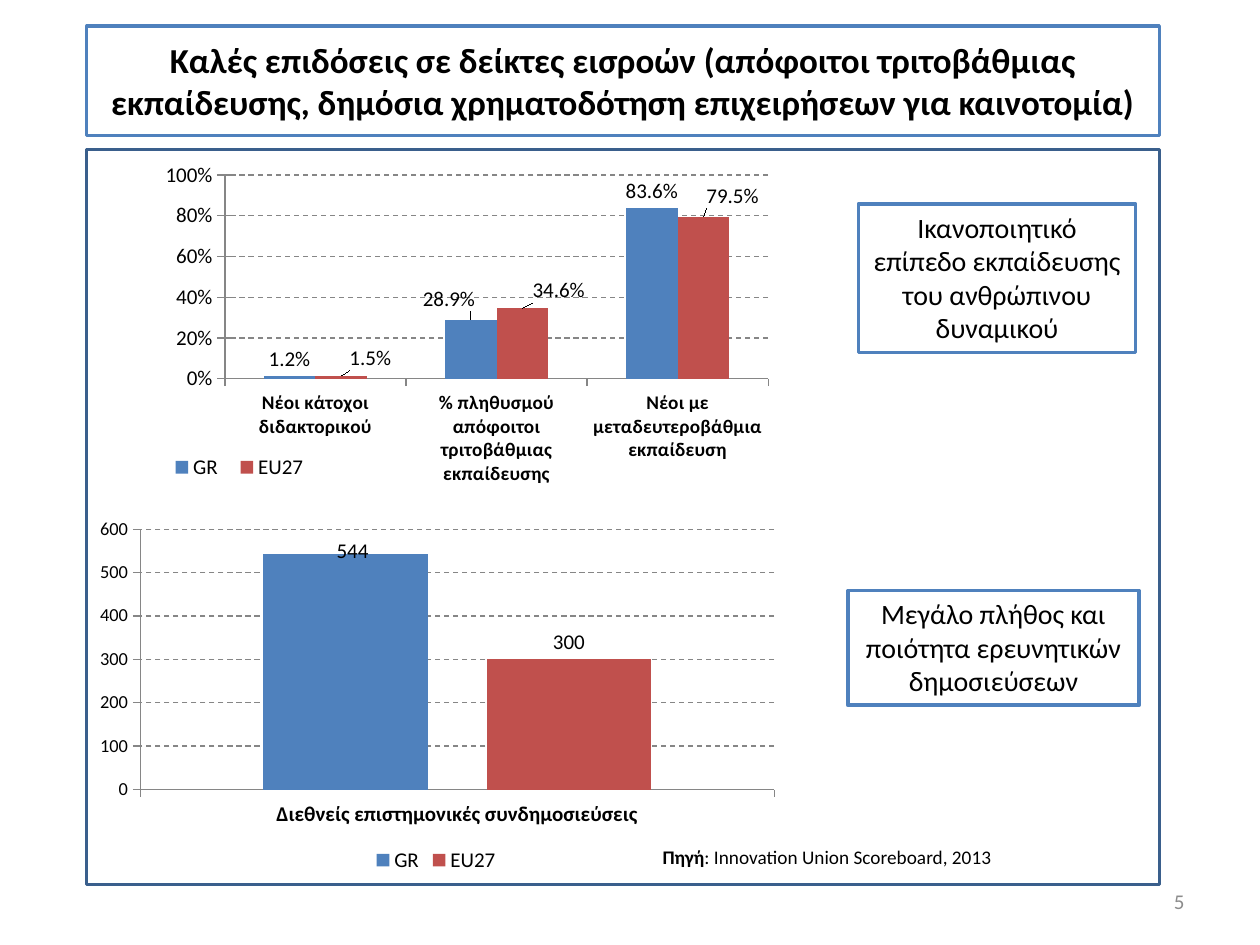
"""Build a slide with two Greek and EU27 column charts and short findings."""
from lxml import etree
from pptx import Presentation
from pptx.chart.data import CategoryChartData
from pptx.dml.color import RGBColor
from pptx.enum.chart import XL_CHART_TYPE, XL_LABEL_POSITION, XL_LEGEND_POSITION, XL_TICK_MARK
from pptx.enum.dml import MSO_LINE
from pptx.enum.shapes import MSO_SHAPE
from pptx.enum.text import MSO_ANCHOR, PP_ALIGN
from pptx.oxml.ns import qn
from pptx.util import Pt

COLUMN = XL_CHART_TYPE.COLUMN_CLUSTERED
OUTER = XL_LABEL_POSITION.OUTSIDE_END
BOTTOM = XL_LEGEND_POSITION.BOTTOM
OUT, CROSS = XL_TICK_MARK.OUTSIDE, XL_TICK_MARK.CROSS
DASH = MSO_LINE.DASH
RECT = MSO_SHAPE.RECTANGLE
TOP, MIDDLE = MSO_ANCHOR.TOP, MSO_ANCHOR.MIDDLE
LEFT, CENTER, RIGHT = PP_ALIGN.LEFT, PP_ALIGN.CENTER, PP_ALIGN.RIGHT
BLACK = RGBColor(0, 0, 0)
WHITE = RGBColor(255, 255, 255)
BLUE = RGBColor(0x4F, 0x81, 0xBD)
RED = RGBColor(0xC0, 0x50, 0x4D)
NAVY = RGBColor(0x3A, 0x5F, 0x8C)
GREY = RGBColor(0x8C, 0x8C, 0x8C)
RULE = RGBColor(0x86, 0x86, 0x86)
FONT = "Calibri"

prs = Presentation()
prs.slide_width, prs.slide_height = Pt(720), Pt(540)
slide = prs.slides.add_slide(prs.slide_layouts[6])
shapes = slide.shapes


def place(node, spot, after=None, inner=False):
    """Give a chart part a manual layout."""
    for old in node.findall(qn("c:layout")):
        node.remove(old)
    layout = etree.Element(qn("c:layout"))
    manual = etree.SubElement(layout, qn("c:manualLayout"))
    pairs = list(zip("xywh", spot))
    if inner:
        pairs.insert(0, ("layoutTarget", "inner"))
    if len(spot) == 4:
        at = 1 if inner else 0
        pairs[at:at] = [("xMode", "edge"), ("yMode", "edge")]
    for tag, val in pairs:
        etree.SubElement(manual, qn("c:" + tag)).set("val", str(val))
    if after is None:
        node.insert(0, layout)
    else:
        after.addnext(layout)
    return layout


def write(shape, runs, size, color, align, anchor):
    """Fill a shape with one paragraph of (text, bold) runs."""
    frame = shape.text_frame
    frame.word_wrap = True
    frame.vertical_anchor = anchor
    para = frame.paragraphs[0]
    para.alignment = align
    for text, bold in runs:
        run = para.add_run()
        run.text = text
        run.font.name, run.font.size, run.font.bold = FONT, Pt(size), bold
        run.font.color.rgb = color


papers = dict(
    box=(48, 292, 402.5, 209.5), cats=["Διεθνείς επιστημονικές συνδημοσιεύσεις"],
    vals=[[544], [300]], form="0", axis="0", top=600, step=100, tick=OUT,
    sizes=(12, 10.5), lap=-36, plot=(0.08, 0.05, 0.9, 0.71), key=None,
    shifts=[{0: (0.01, 0.04)}, {}])
skills = dict(
    box=(54, 88.5, 414, 191),
    cats=["Νέοι κάτοχοι διδακτορικού", "% πληθυσμού απόφοιτοι τριτοβάθμιας εκπαίδευσης",
          "Νέοι με μεταδευτεροβάθμια εκπαίδευση"],
    vals=[[0.012, 0.289, 0.836], [0.015, 0.346, 0.795]],
    form="0.0%", axis="0%", top=1, step=0.2, tick=CROSS,
    sizes=(11, 12), lap=0, plot=(0.18, 0.06, 0.75, 0.61), key=(0.09, 0.89, 0.22, 0.09),
    shifts=[{1: (-0.03, -0.01)}, {0: (0.04, 0), 1: (0.05, 0), 2: (0.04, -0.01)}])

for info in (papers, skills):
    data = CategoryChartData(number_format=info["form"])
    data.categories = info["cats"]
    for name, vals in zip(("GR", "EU27"), info["vals"]):
        data.add_series(name, vals)
    chart = shapes.add_chart(COLUMN, *map(Pt, info["box"]), data).chart
    chart.has_title = False
    chart.font.name, chart.font.size = FONT, Pt(12)
    chart.font.color.rgb = BLACK
    chart.has_legend = True
    legend = chart.legend
    legend.position, legend.include_in_layout = BOTTOM, False
    legend.font.size = Pt(12)
    if info["key"]:
        element = legend._element
        place(element, info["key"], element.find(qn("c:legendPos")))
    area = chart._chartSpace.chart.plotArea
    place(area, info["plot"], inner=True)

    cat, val = chart.category_axis, chart.value_axis
    for axis, tick, size in zip((cat, val), (OUT, info["tick"]), info["sizes"]):
        axis.major_tick_mark = tick
        axis.tick_labels.font.size = Pt(size)
        axis.format.line.color.rgb = RULE
        axis.format.line.width = Pt(0.75)
    cat.tick_labels.font.bold = True
    val.minimum_scale, val.maximum_scale = 0, info["top"]
    val.major_unit = info["step"]
    val.tick_labels.number_format = info["axis"]
    val.tick_labels.number_format_is_linked = False
    grid = val.major_gridlines.format.line
    grid.color.rgb, grid.width, grid.dash_style = RULE, Pt(0.75), DASH

    plot = chart.plots[0]
    plot.gap_width, plot.overlap, plot.vary_by_categories = 150, info["lap"], False
    for series, color, shifts in zip(plot.series, (BLUE, RED), info["shifts"]):
        series.format.fill.solid()
        series.format.fill.fore_color.rgb = color
        labels = series.data_labels
        labels.show_value, labels.position = True, OUTER
        labels.number_format, labels.number_format_is_linked = info["form"], False
        labels.font.size = Pt(12)
        for num, spot in shifts.items():
            label = series.points[num].data_label
            label.font.size = Pt(12)
            label.position = OUTER
            node = series._element.xpath(f'c:dLbls/c:dLbl[c:idx/@val="{num}"]')[0]
            layout = place(node, spot, node.find(qn("c:idx")))
            form = etree.Element(qn("c:numFmt"), formatCode=info["form"], sourceLinked="0")
            layout.addnext(form)

boxes = [
    ((49.5, 15, 613, 62.5), 20, True, MIDDLE,
     "Καλές επιδόσεις σε δείκτες εισροών (απόφοιτοι τριτοβάθμιας εκπαίδευσης, "
     "δημόσια χρηματοδότηση επιχειρήσεων για καινοτομία)"),
    ((490.5, 116.5, 158.5, 85), 16, False, TOP,
     "Ικανοποιητικό επίπεδο εκπαίδευσης του ανθρώπινου δυναμικού"),
    ((484.5, 337.5, 166.5, 65.5), 16, False, TOP,
     "Μεγάλο πλήθος και ποιότητα ερευνητικών δημοσιεύσεων"),
]
for box, size, bold, anchor, text in boxes:
    shape = shapes.add_shape(RECT, *map(Pt, box))
    shape.shadow.inherit = False
    shape.fill.solid()
    shape.fill.fore_color.rgb = WHITE
    shape.line.color.rgb, shape.line.width = BLUE, Pt(2)
    write(shape, [(text, bold)], size, BLACK, CENTER, anchor)

source = shapes.add_textbox(Pt(371.5), Pt(479.5), Pt(295), Pt(21))
write(source, [("Πηγή", True), (": Innovation Union Scoreboard, 2013", False)],
      11, BLACK, LEFT, TOP)
number = shapes.add_textbox(Pt(516), Pt(500.5), Pt(168), Pt(28.5))
write(number, [("5", False)], 12, GREY, RIGHT, MIDDLE)

border = shapes.add_shape(RECT, Pt(49.5), Pt(85.5), Pt(613), Pt(420))
border.shadow.inherit = False
border.fill.background()
border.line.color.rgb, border.line.width = NAVY, Pt(2)

prs.save("out.pptx")
